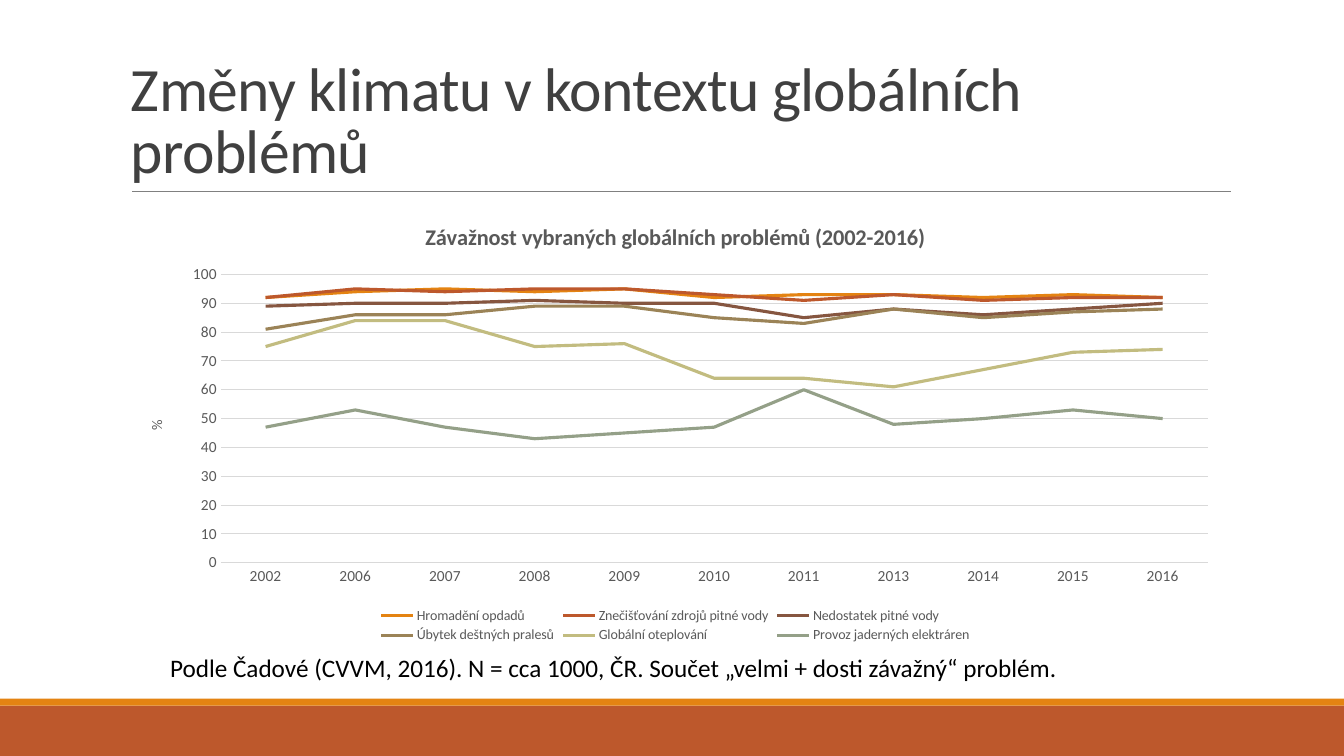
from lxml import etree
from pptx import Presentation
from pptx.chart.data import CategoryChartData
from pptx.dml.color import RGBColor
from pptx.enum.chart import XL_CHART_TYPE as ChartType
from pptx.enum.chart import XL_LEGEND_POSITION as LegendPosition
from pptx.enum.chart import XL_TICK_MARK as TickMark
from pptx.enum.shapes import MSO_CONNECTOR as Connector
from pptx.enum.shapes import MSO_SHAPE as Shape
from pptx.enum.text import MSO_ANCHOR as Anchor
from pptx.oxml import parse_xml
from pptx.oxml.ns import nsdecls, qn
from pptx.util import Pt

FONT = "Calibri"
WIDTH, HEIGHT = 960, 540
COLORS = {
    "band": "BD582C", "stripe": "E48312", "rule": "808080", "title": "404040",
    "text": "000000", "chart": "595959", "grid": "D9D9D9",
}
YEARS = ["2002", "2006", "2007", "2008", "2009", "2010",
         "2011", "2013", "2014", "2015", "2016"]
PROBLEMS = [
    ("Hromadění opdadů", "E48312", (92, 94, 95, 94, 95, 92, 93, 93, 92, 93, 92)),
    ("Znečišťování zdrojů pitné vody", "BD582C", (92, 95, 94, 95, 95, 93, 91, 93, 91, 92, 92)),
    ("Nedostatek pitné vody", "865640", (89, 90, 90, 91, 90, 90, 85, 88, 86, 88, 90)),
    ("Úbytek deštných pralesů", "9B8357", (81, 86, 86, 89, 89, 85, 83, 88, 85, 87, 88)),
    ("Globální oteplování", "C2BC80", (75, 84, 84, 75, 76, 64, 64, 61, 67, 73, 74)),
    ("Provoz jaderných elektráren", "94A088", (47, 53, 47, 43, 45, 47, 60, 48, 50, 53, 50)),
]


def rgb(name):
    """Return the colour for a palette name or a hex string."""
    return RGBColor.from_string(COLORS.get(name, name))


def style_font(font, size, color, bold=False):
    """Set the face, size, weight and colour of a font."""
    font.name, font.size, font.bold = FONT, Pt(size), bold
    font.color.rgb = rgb(color)


def style_line(line, color, width):
    """Set the colour and width of a line."""
    line.color.rgb = rgb(color)
    line.width = Pt(width)


def add_text(page, box, text, size, color, anchor=Anchor.TOP, spacing=1.0,
             tracking=0, right_margin=7.2):
    """Add a wrapped one-paragraph text box."""
    frame = page.shapes.add_textbox(*map(Pt, box)).text_frame
    frame.word_wrap = True
    frame.vertical_anchor = anchor
    frame.margin_right = Pt(right_margin)
    para = frame.paragraphs[0]
    para.line_spacing = spacing
    span = para.add_run()
    span.text = text
    style_font(span.font, size, color)
    if tracking:
        span.font._element.set("spc", str(round(tracking * 100)))


def add_bar(page, box, color):
    """Add a plain filled rectangle."""
    bar = page.shapes.add_shape(Shape.RECTANGLE, *map(Pt, box))
    bar.shadow.inherit = False
    bar.fill.solid()
    bar.fill.fore_color.rgb = rgb(color)
    bar.line.fill.background()


def add_footer(page, box):
    """Add the bottom band with the thin stripe above it."""
    left, top, width, height = box
    stripe = 5
    add_bar(page, (left, top + stripe, width, height - stripe), "band")
    add_bar(page, (left, top, width, stripe), "stripe")


def add_heading(page, box):
    """Add the slide title and the rule under it."""
    left, top, width, height = box
    add_text(page, box, "Změny klimatu v kontextu globálních problémů", 44, "title",
             anchor=Anchor.BOTTOM, spacing=0.85, tracking=-0.5, right_margin=30)
    bottom = top + height
    ends = (left + 8, bottom, left + 793, bottom)
    rule = page.shapes.add_connector(Connector.STRAIGHT, *map(Pt, ends))
    style_line(rule.line, "rule", 0.5)
    etree.SubElement(rule._element.spPr, qn("a:effectLst"))


def set_chart_title(owner, text, size, bold=False):
    """Give a chart or an axis a formatted title."""
    title = owner.chart_title if hasattr(owner, "chart_title") else owner.axis_title
    para = title.text_frame.paragraphs[0]
    span = para.add_run()
    span.text = text
    style_font(span.font, size, "chart", bold)


def place_plot(chart, **fractions):
    """Fix the inner plot area as fractions of the chart."""
    parts = "".join(f'<c:{key} val="{value}"/>' for key, value in fractions.items())
    area = chart._chartSpace.chart.plotArea
    for layout in area.findall(qn("c:layout")):
        area.remove(layout)
    area.insert(0, parse_xml(
        f'<c:layout {nsdecls("c")}><c:manualLayout><c:layoutTarget val="inner"/>'
        f'<c:xMode val="edge"/><c:yMode val="edge"/>{parts}'
        '</c:manualLayout></c:layout>'))


def style_axes(chart):
    """Format the year axis and the percentage axis."""
    years, percent = chart.category_axis, chart.value_axis
    for axis in (years, percent):
        axis.major_tick_mark = axis.minor_tick_mark = TickMark.NONE
        style_font(axis.tick_labels.font, 11, "chart")
    style_line(years.format.line, "grid", 0.75)
    percent.format.line.fill.background()
    percent.minimum_scale, percent.maximum_scale, percent.major_unit = 0, 100, 10
    percent.has_major_gridlines = True
    style_line(percent.major_gridlines.format.line, "grid", 0.75)
    set_chart_title(percent, "%", 10.5)


def add_problem_chart(page, box):
    """Add the line chart of the seriousness of global problems."""
    data = CategoryChartData()
    data.categories = YEARS
    for name, _, values in PROBLEMS:
        data.add_series(name, values)
    chart = page.shapes.add_chart(ChartType.LINE, *map(Pt, box), data).chart
    style_font(chart.font, 10, "text")
    set_chart_title(chart, "Závažnost vybraných globálních problémů (2002-2016)", 16, True)
    chart.plots[0].vary_by_categories = False
    for series, (_, color, _) in zip(chart.plots[0].series, PROBLEMS):
        series.smooth = False
        style_line(series.format.line, color, 2.25)
    style_axes(chart)
    chart.has_legend = True
    chart.legend.position = LegendPosition.BOTTOM
    chart.legend.include_in_layout = False
    style_font(chart.legend.font, 10, "chart")
    place_plot(chart, x=0.09, y=0.16, w=0.89, h=0.65)


def build_slide(deck):
    """Compose the slide from its regions."""
    page = deck.slides.add_slide(deck.slide_layouts[6])
    add_footer(page, (0, 499, WIDTH, HEIGHT - 499))
    add_heading(page, (86.4, 22.4, 828.6, 114.4))
    add_problem_chart(page, (86.4, 145.4, 792, 316.8))
    add_text(page, (114.4, 462.2, 764, 29),
             "Podle Čadové (CVVM, 2016). N = cca 1000, ČR. "
             "Součet „velmi + dosti závažný“ problém.", 18, "text")


def main():
    """Build and save the deck."""
    deck = Presentation()
    deck.slide_width, deck.slide_height = Pt(WIDTH), Pt(HEIGHT)
    build_slide(deck)
    deck.save("out.pptx")


if __name__ == "__main__":
    main()
